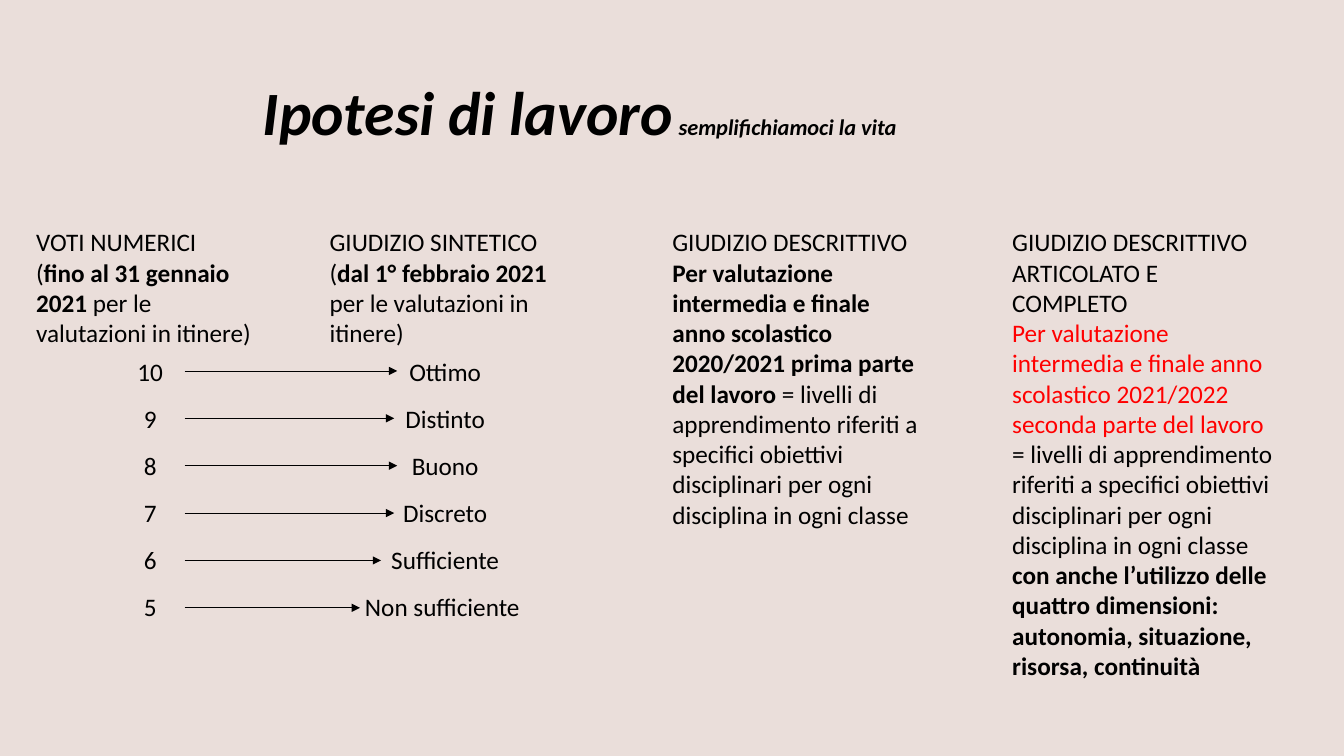
from pptx import Presentation
from pptx.dml.color import RGBColor as Rgb
from pptx.enum.shapes import MSO_CONNECTOR as Conn
from pptx.enum.text import MSO_ANCHOR as Anchor, PP_ALIGN as Align
from pptx.oxml.ns import qn
from pptx.util import Inches, Pt
from lxml.etree import SubElement as Sub

BLACK, RED, BACK = "000000", "FF0000", "EADEDA"
TOP = 2.2
ROWS = [
    ("10", "Ottimo", 3.94),
    ("9", "Distinto", 3.91),
    ("8", "Buono", 3.94),
    ("7", "Discreto", 3.91),
    ("6", "Sufficiente", 3.78),
    ("5", "Non sufficiente ", 3.57),
]
GOALS = ("= livelli di apprendimento riferiti a specifici obiettivi "
         "disciplinari per ogni disciplina in ogni classe")


def paint(target, color):
    """Set a solid colour on a fill."""
    target.solid()
    target.fore_color.rgb = Rgb.from_string(color)


def add_box(slide, left, top, width, height):
    """Add a wrapping text box and return its frame."""
    frame = slide.shapes.add_textbox(
        Inches(left), Inches(top), Inches(width), Inches(height)).text_frame
    frame.word_wrap = True
    return frame


def add_para(frame, *parts, first=False):
    """Add a paragraph of (text, bold, colour) parts."""
    para = frame.paragraphs[0] if first else frame.add_paragraph()
    para.font.name = "Calibri"
    para.font.size = Pt(18)
    for text, bold, color in parts:
        run = para.add_run()
        run.text = text
        run.font.bold = bold
        paint(run.font.fill, color)
    return para


def add_title(slide):
    """Add the title with its smaller ending."""
    frame = add_box(slide, 0, 0.42, 11.5, 1.45)
    frame.vertical_anchor = Anchor.MIDDLE
    para = add_para(frame, ("Ipotesi di lavoro", True, BLACK),
                    (" semplifichiamoci la vita", True, BLACK), first=True)
    para.alignment = Align.CENTER
    para.line_spacing = 0.9
    para.font.italic = True
    for run, size in zip(para.runs, (44, 16)):
        run.font.size = Pt(size)


def add_column(slide, left, width, height, head, *parts):
    """Add a column with a heading and a body, and return its frame."""
    frame = add_box(slide, left, TOP, width, height)
    add_para(frame, (head, False, BLACK), first=True)
    add_para(frame, *parts)
    return frame


def add_scale(slide, left, width, height, head, date, marks):
    """Add a column that ends in a centred list of marks."""
    frame = add_column(slide, left, width, height, head,
                       ("(", False, BLACK), (date, True, BLACK),
                       ("per le valutazioni in itinere)", False, BLACK))
    for mark in marks:
        para = add_para(frame, (mark, False, BLACK))
        para.alignment = Align.CENTER
        para.space_before = para.space_after = Pt(6)


def add_arrow(slide, start, end, level):
    """Add a thin level arrow."""
    line = slide.shapes.add_connector(
        Conn.STRAIGHT, Inches(start), Inches(level), Inches(end), Inches(level))
    line.line.width = Pt(0.5)
    paint(line.line.fill, BLACK)
    Sub(line.line._get_or_add_ln(), qn("a:tailEnd"), type="triangle")
    Sub(line._element.spPr, qn("a:effectLst"))


def main():
    """Build the slide and save it."""
    deck = Presentation()
    deck.slide_width, deck.slide_height = Inches(13.33), Inches(7.5)
    slide = deck.slides.add_slide(deck.slide_layouts[6])
    paint(slide.background.fill, BACK)
    add_title(slide)
    votes, words, tips = zip(*ROWS)
    add_scale(slide, 0.26, 2.46, 4.44, "VOTI NUMERICI",
              "fino al 31 gennaio 2021 ", votes)
    add_scale(slide, 3.17, 2.49, 4.06, "GIUDIZIO SINTETICO",
              "dal 1° febbraio 2021 ", words)
    for row, tip in enumerate(tips):
        add_arrow(slide, 1.83, tip, 3.68 + 0.47 * row)
    add_column(slide, 6.57, 2.72, 3.13, "GIUDIZIO DESCRITTIVO",
               ("Per valutazione intermedia e finale anno scolastico "
                "2020/2021 prima parte del lavoro ", True, BLACK),
               (GOALS, False, BLACK))
    full = add_column(slide, 9.94, 2.79, 4.95, "GIUDIZIO DESCRITTIVO",
                      ("ARTICOLATO E COMPLETO", False, BLACK))
    add_para(full,
             ("Per valutazione intermedia e finale anno scolastico "
              "2021/2022 seconda parte del lavoro ", False, RED),
             (GOALS + " ", False, BLACK),
             ("con anche l’utilizzo delle quattro dimensioni: autonomia, "
              "situazione, risorsa, continuità", True, BLACK))
    deck.save("out.pptx")


if __name__ == "__main__":
    main()
